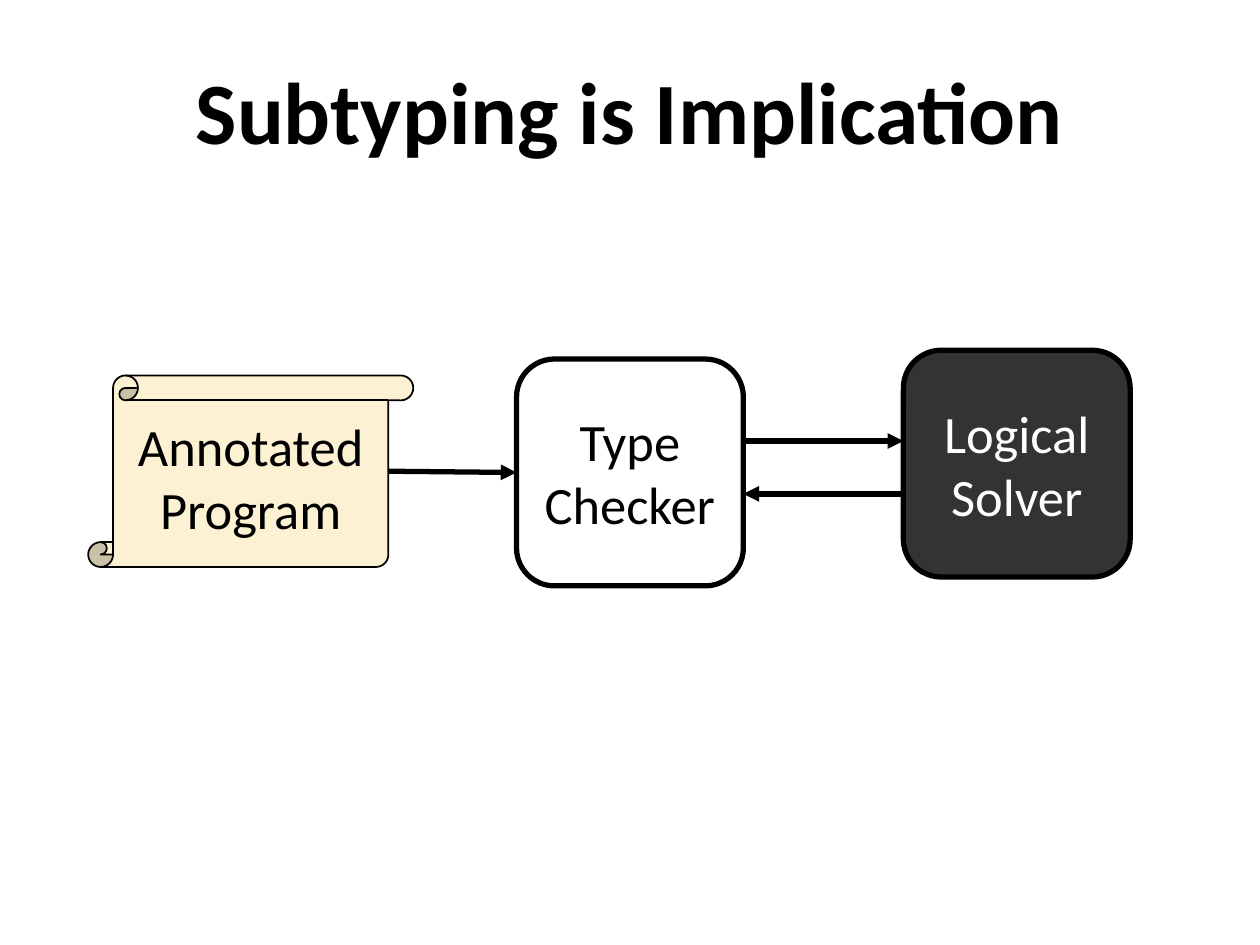
"""Build the slide "Subtyping is Implication" with its checker pipeline."""
from lxml import etree
from pptx import Presentation
from pptx.dml.color import RGBColor
from pptx.enum.shapes import MSO_CONNECTOR, MSO_SHAPE
from pptx.enum.text import MSO_ANCHOR, PP_ALIGN
from pptx.oxml.ns import qn
from pptx.util import Inches, Pt

ROUNDED, SCROLL = MSO_SHAPE.ROUNDED_RECTANGLE, MSO_SHAPE.VERTICAL_SCROLL
STRAIGHT, MIDDLE, CENTER = MSO_CONNECTOR.STRAIGHT, MSO_ANCHOR.MIDDLE, PP_ALIGN.CENTER
BLACK = RGBColor(0x00, 0x00, 0x00)
WHITE = RGBColor(0xFF, 0xFF, 0xFF)
CHARCOAL = RGBColor(0x33, 0x33, 0x33)
CREAM = RGBColor(0xFC, 0xF1, 0xD3)
FONT = "Calibri"

TITLE = "Subtyping is Implication"
TITLE_BOX = (0, 0.42, 10, 0.89)
STAGES = [
    ("Logical\nSolver", ROUNDED, 0.167, (7.17, 2.78, 1.8, 1.8), CHARCOAL, WHITE, 3),
    ("Annotated\nProgram", SCROLL, 0.13, (0.7, 2.98, 2.58, 1.52), CREAM, BLACK, 1),
    ("Type\nChecker", ROUNDED, 0.167, (4.1, 2.85, 1.8, 1.8), None, BLACK, 3),
]
PROGRAM_RIGHT, CHECKER_LEFT, CHECKER_RIGHT, SOLVER_LEFT = 3.08, 4.1, 5.9, 7.17
ARROWS = [
    (PROGRAM_RIGHT, 3.74, CHECKER_LEFT, 3.75),
    (CHECKER_RIGHT, 3.5, SOLVER_LEFT, 3.5),
    (SOLVER_LEFT, 3.92, CHECKER_RIGHT, 3.92),
]


def write_text(shape, text, size, color, bold=False, wrap=False):
    frame = shape.text_frame
    frame.text = text
    frame.word_wrap = wrap
    frame.vertical_anchor = MIDDLE
    for paragraph in frame.paragraphs:
        paragraph.alignment = CENTER
        for run in paragraph.runs:
            run.font.name, run.font.size, run.font.bold = FONT, Pt(size), bold
            run.font.color.rgb = color


def add_stage(slide, text, kind, adjustment, box, fill, text_color, line_width):
    shape = slide.shapes.add_shape(kind, *map(Inches, box))
    shape.adjustments[0] = adjustment
    shape.shadow.inherit = False
    if fill is None:
        shape.fill.background()
    else:
        shape.fill.solid()
        shape.fill.fore_color.rgb = fill
    shape.line.color.rgb = BLACK
    shape.line.width = Pt(line_width)
    write_text(shape, text, 30, text_color)


def add_arrow(slide, ends):
    arrow = slide.shapes.add_connector(STRAIGHT, *map(Inches, ends))
    arrow.line.color.rgb = BLACK
    arrow.line.width = Pt(3)
    etree.SubElement(arrow.line._get_or_add_ln(), qn("a:tailEnd"), type="triangle")
    etree.SubElement(arrow._element.spPr, qn("a:effectLst"))


def main():
    presentation = Presentation()
    presentation.slide_width, presentation.slide_height = Inches(10), Inches(7.5)
    slide = presentation.slides.add_slide(presentation.slide_layouts[6])
    title = slide.shapes.add_textbox(*map(Inches, TITLE_BOX))
    write_text(title, TITLE, 50, BLACK, bold=True, wrap=True)
    for stage in STAGES:
        add_stage(slide, *stage)
    for ends in ARROWS:
        add_arrow(slide, ends)
    presentation.save("out.pptx")


if __name__ == "__main__":
    main()
